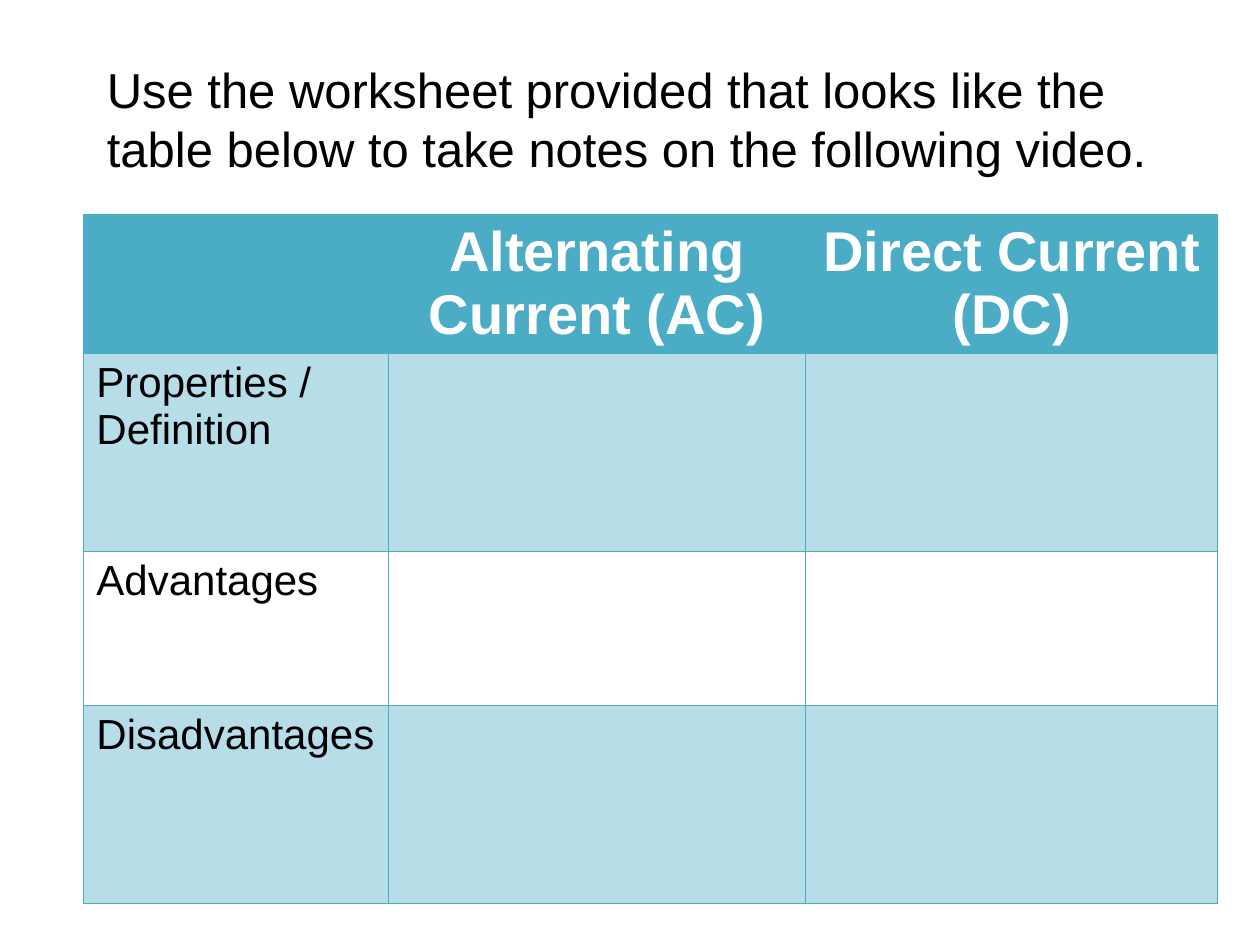
from dataclasses import dataclass

from pptx import Presentation
from pptx.dml.color import RGBColor
from pptx.enum.text import MSO_ANCHOR, MSO_AUTO_SIZE, PP_ALIGN
from pptx.oxml.ns import qn
from pptx.oxml.xmlchemy import OxmlElement
from pptx.util import Cm, Pt


@dataclass(frozen=True)
class Theme:
    font: str = "Arial"
    text: str = "000000"
    header_text: str = "FFFFFF"
    accent: str = "4BACC6"
    band_opacity: int = 40
    title_size: int = 28
    header_size: int = 32
    label_size: int = 24
    border: float = 0.75


class WorksheetSlide:
    def __init__(self, prs, theme):
        self.theme = theme
        self.slide = prs.slides.add_slide(prs.slide_layouts[5])

    def add_run(self, p, text, size, color, bold=False):
        r = p.add_run()
        r.text = text
        font = r.font
        font.name, font.size, font.bold = self.theme.font, Pt(size), bold
        font.color.rgb = RGBColor.from_string(color)

    def title(self, text, left, top, width, height):
        sp = self.slide.shapes.title
        sp.left, sp.top, sp.width, sp.height = map(Cm, (left, top, width, height))
        tf = sp.text_frame
        tf.word_wrap = True
        tf.auto_size = MSO_AUTO_SIZE.NONE
        tf.vertical_anchor = MSO_ANCHOR.TOP
        p = tf.paragraphs[0]
        p.alignment = PP_ALIGN.LEFT
        self.add_run(p, text, self.theme.title_size, self.theme.text)

    def cell_borders(self, cell):
        tcPr = cell._tc.get_or_add_tcPr()
        for side in ("a:lnL", "a:lnR", "a:lnT", "a:lnB"):
            ln = OxmlElement(side)
            ln.set("w", str(Pt(self.theme.border)))
            fill = OxmlElement("a:solidFill")
            color = OxmlElement("a:srgbClr")
            color.set("val", self.theme.accent)
            fill.append(color)
            ln.append(fill)
            tcPr.append(ln)

    def cell_fill(self, cell, opacity):
        """Fill with the accent colour at a percentage; 0 leaves the cell clear."""
        if not opacity:
            cell.fill.background()
            return
        cell.fill.solid()
        cell.fill.fore_color.rgb = RGBColor.from_string(self.theme.accent)
        if opacity < 100:
            alpha = OxmlElement("a:alpha")
            alpha.set("val", str(opacity * 1000))
            solid = cell._tc.tcPr.find(qn("a:solidFill"))
            solid.find(qn("a:srgbClr")).append(alpha)

    def table(self, headers, labels, left, top, widths, heights):
        """Build a notes grid: a header row, then labelled rows with blank cells."""
        blanks = [""] * (len(headers) - 1)
        rows = [headers] + [[label, *blanks] for label in labels]
        frame = self.slide.shapes.add_table(
            len(rows), len(headers), Cm(left), Cm(top),
            Cm(sum(widths)), Cm(sum(heights)))
        table = frame.table
        table.horz_banding = False
        for column, width in zip(table.columns, widths):
            column.width = Cm(width)
        for row, height in zip(table.rows, heights):
            row.height = Cm(height)
        th = self.theme
        for i, texts in enumerate(rows):
            is_header = i == 0
            opacity = 100 if is_header else th.band_opacity * (i % 2)
            for j, text in enumerate(texts):
                cell = table.cell(i, j)
                self.cell_borders(cell)
                self.cell_fill(cell, opacity)
                if not text:
                    continue
                p = cell.text_frame.paragraphs[0]
                if is_header:
                    p.alignment = PP_ALIGN.CENTER
                    self.add_run(p, text, th.header_size, th.header_text, True)
                else:
                    self.add_run(p, text, th.label_size, th.text)


def main():
    prs = Presentation()
    prs.slide_width, prs.slide_height = Cm(25.4), Cm(19.05)
    s = WorksheetSlide(prs, Theme())
    s.title("Use the worksheet provided that looks like the table below "
            "to take notes on the following video.", 1.9, 1.07, 22.23, 2.65)
    s.table(["", "Alternating Current (AC)", "Direct Current (DC)"],
            ["Properties / Definition", "Advantages", "Disadvantages"],
            1.69, 4.33, widths=[6.14, 8.41, 8.31], heights=[2.8, 3.99, 3.1, 3.99])
    prs.save("out.pptx")


if __name__ == "__main__":
    main()
